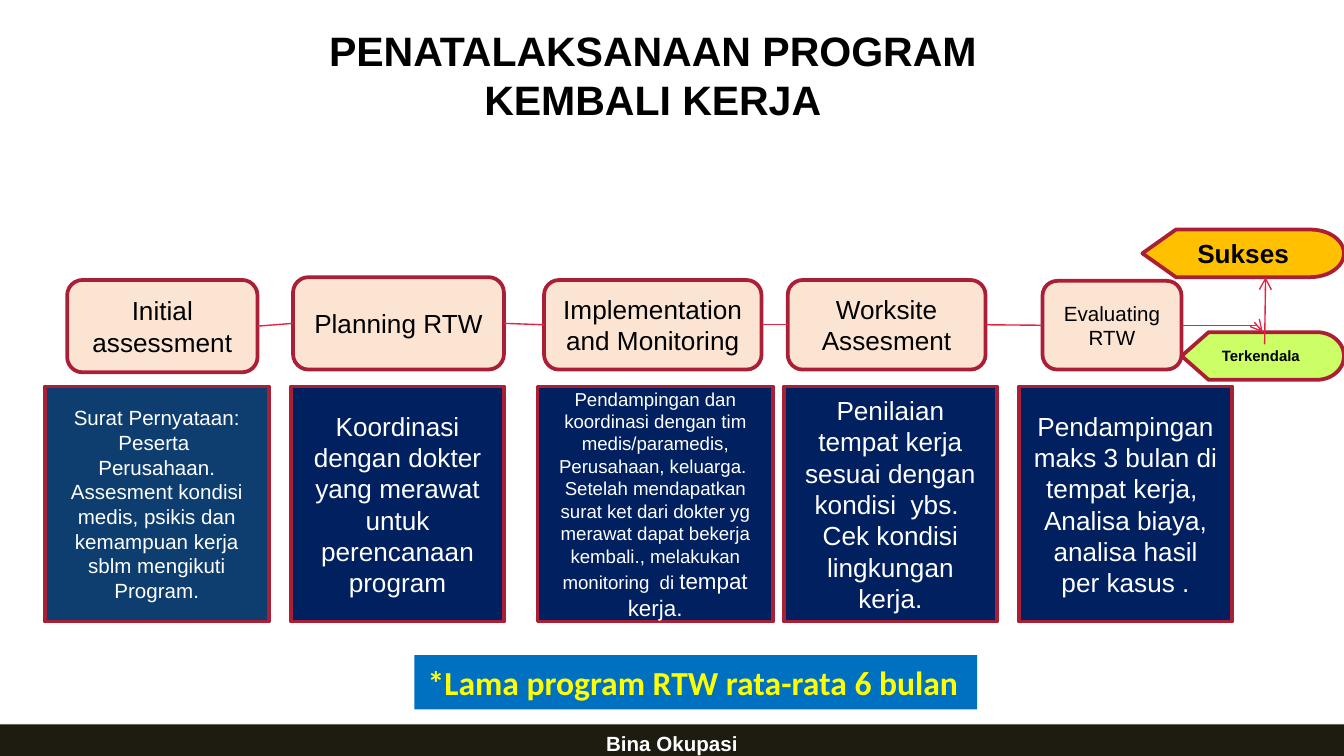
import pptx
import pptx.dml.color
import pptx.enum.shapes
import pptx.enum.text
import pptx.oxml
import pptx.oxml.ns
import pptx.util
from lxml import etree

Pt = pptx.util.Pt
SHAPE = pptx.enum.shapes.MSO_SHAPE
CONNECTOR = pptx.enum.shapes.MSO_CONNECTOR
ANCHOR = pptx.enum.text.MSO_ANCHOR
ALIGN = pptx.enum.text.PP_ALIGN
qn = pptx.oxml.ns.qn

COLORS = {
    "black": "000000", "white": "FFFFFF", "yellow": "FFFF00",
    "peach": "FCE4D3", "border": "AA1E36", "link": "E62344",
    "navy": "002060", "steel": "0E3E70", "amber": "FFC000",
    "lime": "CCFF66", "blue": "0070C0", "footer": "1E1C11",
}

# left, top, width, height, text, size
STEPS = [
    (36, 150, 102, 49.5, "Initial assessment", 14),
    (157, 148.5, 113, 49.5, "Planning RTW", 14),
    (291.5, 150, 116.5, 48, "Implementation and Monitoring", 14),
    (422, 150, 106, 48, "Worksite Assesment", 14),
    (558.5, 150.5, 74.5, 47.5, "Evaluating RTW", 11),
]

# left, width, preset, fill, size, paragraphs
DETAILS = [
    (24, 120, SHAPE.RECTANGLE, "steel", 11, [
        "Surat Pernyataan:",
        "Peserta  Perusahaan.",
        "Assesment kondisi medis, psikis dan kemampuan kerja sblm "
        "mengikuti Program."]),
    (156, 114, SHAPE.FLOWCHART_PROCESS, "navy", 14, [
        "Koordinasi dengan dokter yang merawat untuk perencanaan program"]),
    (288, 126, SHAPE.FLOWCHART_PROCESS, "navy", 10, [
        "Pendampingan dan koordinasi dengan tim medis/paramedis, "
        "Perusahaan, keluarga. ",
        [("Setelah mendapatkan surat ket dari dokter yg merawat dapat "
          "bekerja kembali., melakukan monitoring  di ", 10),
         ("tempat kerja.", 12)]]),
    (420, 114, SHAPE.FLOWCHART_PROCESS, "navy", 14, [
        "Penilaian tempat kerja sesuai dengan kondisi  ybs. ",
        "Cek kondisi lingkungan kerja."]),
    (546, 114, SHAPE.FLOWCHART_PROCESS, "navy", 14, [
        "Pendampingan maks 3 bulan di tempat kerja, ",
        "Analisa biaya, analisa hasil per kasus ."]),
]


def rgb(name):
    return pptx.dml.color.RGBColor.from_string(COLORS[name])


def write(sp, paragraphs, size=14, color="black", bold=False, font="Arial",
          align=ALIGN.CENTER, anchor=ANCHOR.MIDDLE, wrap=True):
    """Fill a shape with paragraphs, each a string or a list of (text, size)."""
    tf = sp.text_frame
    tf.word_wrap = wrap
    tf.vertical_anchor = anchor
    for i, runs in enumerate(paragraphs):
        p = tf.paragraphs[0] if i == 0 else tf.add_paragraph()
        p.alignment = align
        for text, run_size in [(runs, size)] if isinstance(runs, str) else runs:
            r = p.add_run()
            r.text = text
            r.font.name = font
            r.font.size = Pt(run_size)
            r.font.bold = bold
            r.font.color.rgb = rgb(color)


def add_box(s, preset, left, top, width, height, fill, line="border"):
    sp = s.shapes.add_shape(preset, Pt(left), Pt(top), Pt(width), Pt(height))
    sp.shadow.inherit = False
    sp.fill.solid()
    sp.fill.fore_color.rgb = rgb(fill)
    if line:
        sp.line.color.rgb = rgb(line)
        sp.line.width = Pt(2)
    else:
        sp.line.fill.background()
    return sp


def add_link(s, x1=0, y1=0, x2=0, y2=0, kind=CONNECTOR.STRAIGHT, arrow=False):
    link = s.shapes.add_connector(kind, Pt(x1), Pt(y1), Pt(x2), Pt(y2))
    link.line.color.rgb = rgb("link")
    link.line.width = Pt(0.75)
    if arrow:
        etree.SubElement(link.line._get_or_add_ln(), qn("a:tailEnd"), type="arrow")
    etree.SubElement(link._element.spPr, qn("a:effectLst"))
    return link


def add_soft_shadow(sp):
    effects = sp._element.spPr.find(qn("a:effectLst"))
    shadow = etree.SubElement(effects, qn("a:outerShdw"), blurRad=str(Pt(3.1)),
                              dist=str(Pt(1.8)), dir="5400000", rotWithShape="0")
    color = etree.SubElement(shadow, qn("a:srgbClr"), val=COLORS["black"])
    etree.SubElement(color, qn("a:alpha"), val="35000")


def add_steps(s):
    steps = []
    for left, top, width, height, text, size in STEPS:
        sp = add_box(s, SHAPE.ROUNDED_RECTANGLE, left, top, width, height, "peach")
        write(sp, [text], size=size)
        steps.append(sp)
    for before, after in zip(steps, steps[1:]):
        link = add_link(s)
        link.begin_connect(before, 3)
        link.end_connect(after, 1)
    return steps


def add_outcomes(s, last_step):
    success = add_box(s, SHAPE.FLOWCHART_DISPLAY, 612, 123, 108, 25.5, "amber")
    write(success, ["Sukses"], bold=True)
    blocked = add_box(s, SHAPE.FLOWCHART_DISPLAY, 633, 178, 87, 25.5, "lime")
    write(blocked, ["Terkendala"], size=8, bold=True, align=ALIGN.LEFT)
    elbow = add_link(s, 633, 174.25, 676.5, 178, CONNECTOR.ELBOW, arrow=True)
    elbow._element.spPr.find(qn("a:prstGeom")).set("prst", "bentConnector2")
    elbow.begin_connect(last_step, 3)
    add_link(s, 677.5, 184.5, 678, 148.5, arrow=True)


def add_details(s):
    for left, width, preset, fill, size, paragraphs in DETAILS:
        sp = add_box(s, preset, left, 207, width, 126, fill)
        write(sp, paragraphs, size=size, color="white")


def main():
    prs = pptx.Presentation()
    prs.slide_width, prs.slide_height = Pt(720), Pt(405)
    s = prs.slides.add_slide(prs.slide_layouts[6])

    steps = add_steps(s)
    add_outcomes(s, steps[-1])
    add_details(s)

    title = s.shapes.add_textbox(Pt(125.5), Pt(10), Pt(448.5), Pt(60.5))
    write(title, ["PENATALAKSANAAN PROGRAM KEMBALI KERJA"], size=22, bold=True,
          anchor=ANCHOR.TOP)

    duration = add_box(s, SHAPE.RECTANGLE, 222, 351, 301.5, 29, "blue", line=None)
    write(duration, ["*Lama program RTW rata-rata 6 bulan"], size=18,
          color="yellow", bold=True, font="Calibri", align=ALIGN.LEFT,
          anchor=ANCHOR.TOP, wrap=False)

    footer = add_box(s, SHAPE.RECTANGLE, -1.5, 388, 723, 21, "footer", line=None)
    add_soft_shadow(footer)
    write(footer, ["Bina Okupasi"], size=11, color="white", bold=True,
          anchor=ANCHOR.TOP)

    prs.save("out.pptx")


if __name__ == "__main__":
    main()
